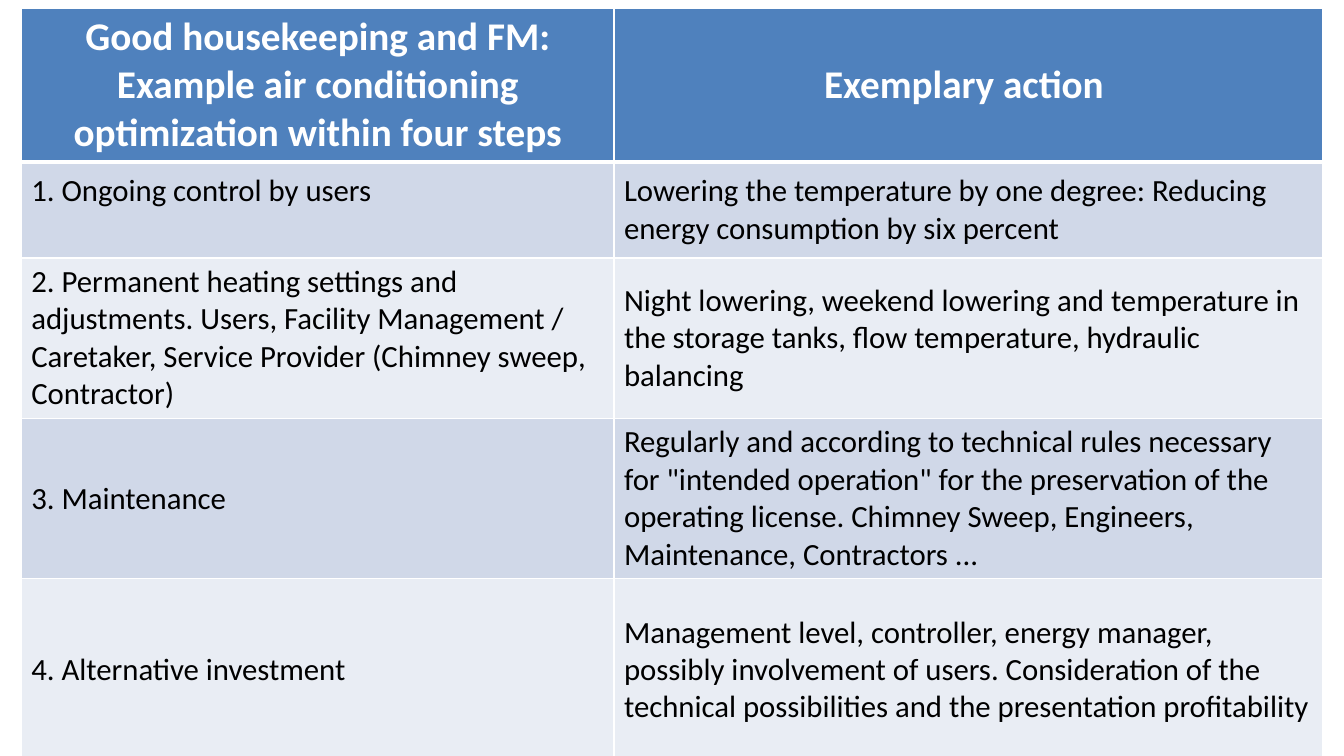
from pptx import Presentation
from pptx.dml.color import RGBColor
from pptx.enum import text
from pptx.oxml import parse_xml
from pptx.oxml.ns import nsdecls
from pptx.util import Pt

HEADER = (
    "Good housekeeping and FM: Example air conditioning optimization within four steps",
    "Exemplary action ",
)
STEPS = [
    ("1. Ongoing control by users",
     "Lowering the temperature by one degree: Reducing energy consumption by six percent"),
    ("2. Permanent heating settings and adjustments. Users, Facility Management / "
     "Caretaker, Service Provider (Chimney sweep, Contractor)",
     "Night lowering, weekend lowering and temperature in the storage tanks, "
     "flow temperature, hydraulic balancing"),
    ("3. Maintenance",
     'Regularly and according to technical rules necessary for "intended operation" for the '
     "preservation of the operating license. Chimney Sweep, Engineers, Maintenance, "
     "Contractors ..."),
    ("4. Alternative investment",
     "Management level, controller, energy manager, possibly involvement of users. "
     "Consideration of the technical possibilities and the presentation profitability"),
]
COLUMN_WIDTHS = (423.4, 506.2)
ROW_HEIGHTS = (109.6, 68.4, 114.6, 114.6, 130.3)
LEFT, TOP = 15.2, 6
FIRST_STEP_BOTTOM_MARGIN = 30.4

WHITE = RGBColor(0xFF, 0xFF, 0xFF)
BLACK = RGBColor(0x00, 0x00, 0x00)
BLUE = RGBColor(0x4F, 0x81, 0xBD)
BANDS = (RGBColor(0xD0, 0xD8, 0xE8), RGBColor(0xE9, 0xED, 0xF4))

HEADER_FONT = {"name": "Calibri", "size": Pt(28), "bold": True}
STEP_FONT = {"name": "Calibri", "size": Pt(22), "bold": False}
CELL_FORMAT = {
    "vertical_anchor": text.MSO_ANCHOR.MIDDLE,
    "margin_left": Pt(7.2), "margin_right": Pt(7.2),
    "margin_top": Pt(3.6), "margin_bottom": Pt(3.6),
}


def set_all(target, values):
    for name, value in values.items():
        setattr(target, name, value)


def add_borders(cell, widths):
    tcPr = cell._tc.get_or_add_tcPr()
    for i, (side, width) in enumerate(widths.items()):
        tcPr.insert(i, parse_xml(
            f'<a:{side} {nsdecls("a")} w="{Pt(width)}"><a:solidFill>'
            f'<a:srgbClr val="{WHITE}"/></a:solidFill></a:{side}>'))


def fill_cell(cell, words, row):
    is_header = row == 0
    set_all(cell, CELL_FORMAT)
    cell.fill.solid()
    cell.fill.fore_color.rgb = BLUE if is_header else BANDS[(row - 1) % 2]
    p = cell.text_frame.paragraphs[0]
    p.alignment = text.PP_ALIGN.CENTER if is_header else text.PP_ALIGN.LEFT
    r = p.add_run()
    r.text = words
    set_all(r.font, HEADER_FONT if is_header else STEP_FONT)
    r.font.color.rgb = WHITE if is_header else BLACK
    add_borders(cell, {"lnL": 1, "lnR": 1, "lnT": 3 if row == 1 else 1,
                       "lnB": 3 if is_header else 1})


def main():
    prs = Presentation()
    prs.slide_width, prs.slide_height = Pt(960), Pt(540)
    s = prs.slides.add_slide(prs.slide_layouts[6])
    rows = [HEADER] + STEPS
    table = s.shapes.add_table(
        len(rows), len(HEADER), Pt(LEFT), Pt(TOP),
        Pt(sum(COLUMN_WIDTHS)), Pt(sum(ROW_HEIGHTS))).table
    for column, width in zip(table.columns, COLUMN_WIDTHS):
        column.width = Pt(width)
    for i, (words, height) in enumerate(zip(rows, ROW_HEIGHTS)):
        table.rows[i].height = Pt(height)
        for j, entry in enumerate(words):
            fill_cell(table.cell(i, j), entry, i)
    table.cell(1, 0).margin_bottom = Pt(FIRST_STEP_BOTTOM_MARGIN)
    prs.save("out.pptx")


if __name__ == "__main__":
    main()
